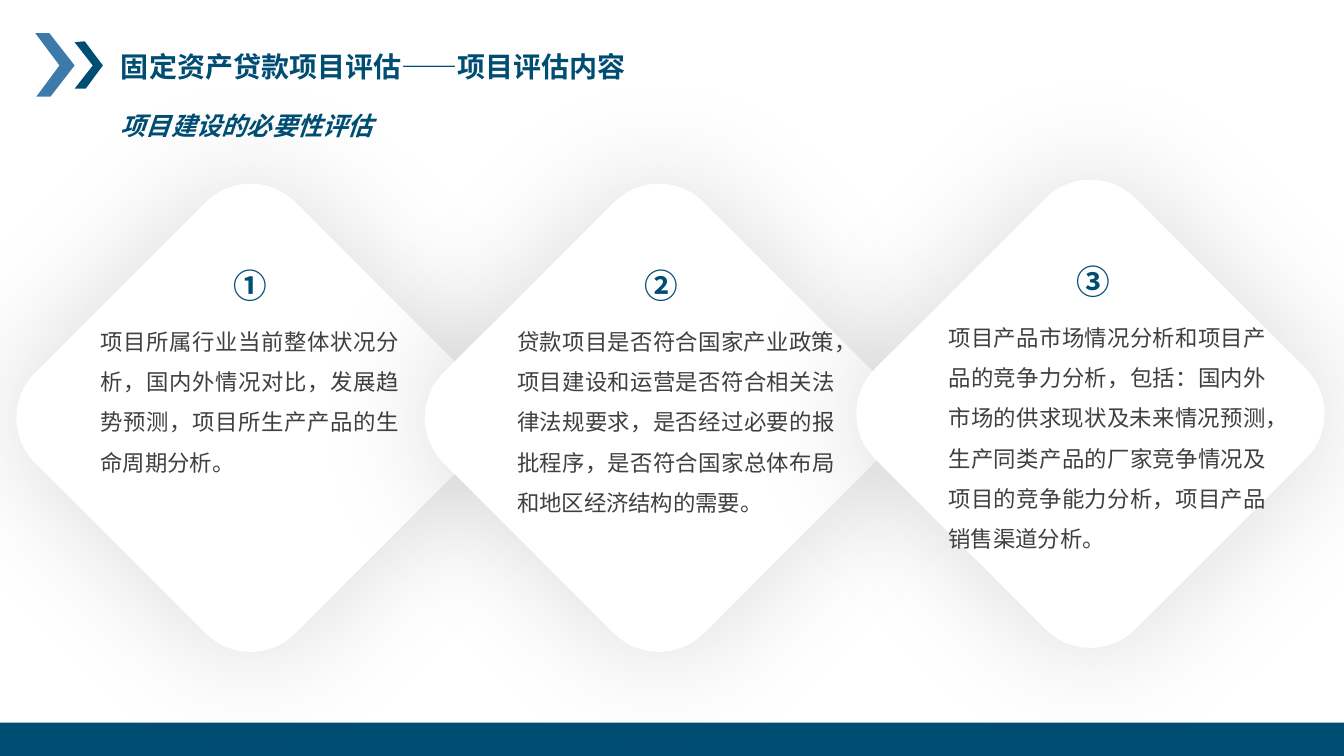
from lxml import etree
from pptx import Presentation
from pptx.dml.color import RGBColor
from pptx.enum.shapes import MSO_SHAPE
from pptx.enum.text import MSO_ANCHOR, MSO_AUTO_SIZE, PP_ALIGN
from pptx.oxml.ns import qn
from pptx.util import Inches, Pt

RECTANGLE, ROUNDED = MSO_SHAPE.RECTANGLE, MSO_SHAPE.ROUNDED_RECTANGLE
TOP = MSO_ANCHOR.TOP
NO_FIT = MSO_AUTO_SIZE.NONE
LEFT, CENTER, JUSTIFY = PP_ALIGN.LEFT, PP_ALIGN.CENTER, PP_ALIGN.JUSTIFY

NAVY = RGBColor(0x00, 0x4D, 0x73)
BLUE = RGBColor(0x3C, 0x7A, 0xAB)
GREY = RGBColor(0x40, 0x40, 0x40)
WHITE = RGBColor(0xFF, 0xFF, 0xFF)
FONT = "Noto Sans CJK SC"

HEADING = {"size": Pt(20), "bold": True}
SUBHEADING = {"size": Pt(18), "bold": True, "italic": True}
NUMBER = {"size": Pt(24), "bold": True}
BODY = {"size": Pt(16)}

CARD_SIZE = 3.59
NUMBER_WIDTH = 2.2

# Chevron outlines, in inches
CHEVRONS = [
    (BLUE, [(0.35, 0.33), (0.49, 0.33), (0.74, 0.65), (0.5, 0.96),
            (0.36, 0.96), (0.59, 0.65)]),
    (NAVY, [(0.74, 0.42), (0.84, 0.41), (1.02, 0.65), (0.85, 0.88),
            (0.74, 0.88), (0.92, 0.65)]),
]

# Card left, card top, number left, body left, body width, number, body
CARDS = [
    (0.69, 2.35, 1.38, 0.9, 3.16, "①",
     "项目所属行业当前整体状况分析，国内外情况对比，发展趋势预测，"
     "项目所生产产品的生命周期分析。"),
    (4.74, 2.35, 5.46, 5.03, 3.35, "②",
     "贷款项目是否符合国家产业政策，项目建设和运营是否符合相关法律法规要求，"
     "是否经过必要的报批程序，是否符合国家总体布局和地区经济结构的需要。"),
    (9.02, 2.31, 9.74, 9.31, 3.35, "③",
     "项目产品市场情况分析和项目产品的竞争力分析，包括：国内外市场的供求现状及"
     "未来情况预测，生产同类产品的厂家竞争情况及项目的竞争能力分析，"
     "项目产品销售渠道分析。"),
]


def place(shape, left, top, width, height):
    shape.left, shape.top = Inches(left), Inches(top)
    shape.width, shape.height = Inches(width), Inches(height)


def write(shape, text, style, color, align=LEFT, spacing=1.0, wrap=True):
    frame = shape.text_frame
    frame.auto_size = NO_FIT
    frame.word_wrap = wrap
    frame.vertical_anchor = TOP
    paragraph = frame.paragraphs[0]
    paragraph.alignment = align
    paragraph.line_spacing = spacing
    run = paragraph.add_run()
    run.text = text
    for name, value in {"name": FONT, **style}.items():
        setattr(run.font, name, value)
    run.font.color.rgb = color
    # East Asian typeface
    latin = run.font._element.find(qn("a:latin"))
    east_asian = etree.Element(qn("a:ea"), typeface=FONT)
    latin.addnext(east_asian)


def add_text(slide, box, text, style, color, **layout):
    textbox = slide.shapes.add_textbox(*map(Inches, box))
    write(textbox, text, style, color, **layout)


def paint(shape, color):
    shape.shadow.inherit = False
    shape.fill.solid()
    shape.fill.fore_color.rgb = color
    shape.line.fill.background()


def add_chevron(slide, color, points):
    corners = [(Inches(x), Inches(y)) for x, y in points]
    builder = slide.shapes.build_freeform(*corners[0])
    builder.add_line_segments(corners[1:], close=True)
    paint(builder.convert_to_shape(), color)


def add_soft_shadow(shape):
    effects = shape._element.spPr.find(qn("a:effectLst"))
    shadow = etree.SubElement(effects, qn("a:outerShdw"), blurRad=str(Pt(90)),
                              dist="0", dir="0", algn="ctr", rotWithShape="0")
    black = etree.SubElement(shadow, qn("a:srgbClr"), val="000000")
    etree.SubElement(black, qn("a:alpha"), val="15000")


def add_card(slide, left, top, number_left, body_left, body_width, number, body):
    diamond = slide.shapes.add_shape(
        ROUNDED, *map(Inches, (left, top, CARD_SIZE, CARD_SIZE)))
    diamond.rotation = 45
    paint(diamond, WHITE)
    diamond.line.color.rgb = WHITE
    diamond.line.width = Pt(4.5)
    add_soft_shadow(diamond)
    add_text(slide, (body_left, top + 0.72, body_width, 2.48), body, BODY, GREY,
             align=JUSTIFY, spacing=1.5)
    add_text(slide, (number_left, top + 0.23, NUMBER_WIDTH, 0.5), number,
             NUMBER, NAVY, align=CENTER)


def main():
    deck = Presentation()
    deck.slide_width, deck.slide_height = Inches(13.33), Inches(7.5)
    slide = deck.slides.add_slide(deck.slide_layouts[5])

    # Header
    for color, points in CHEVRONS:
        add_chevron(slide, color, points)
    title = slide.shapes.title
    place(title, 1.1, 0.44, 5.79, 0.44)
    write(title, "固定资产贷款项目评估——项目评估内容", HEADING, NAVY)

    # Footer band
    footer = slide.shapes.add_shape(
        RECTANGLE, *map(Inches, (0, 7.17, 13.33, 0.33)))
    paint(footer, NAVY)

    # Three assessment cards
    for card in CARDS:
        add_card(slide, *card)

    # Subheading, above the card shadows
    add_text(slide, (1.1, 1.05, 2.73, 0.4), "项目建设的必要性评估",
             SUBHEADING, NAVY, wrap=False)

    deck.save("out.pptx")


if __name__ == "__main__":
    main()
